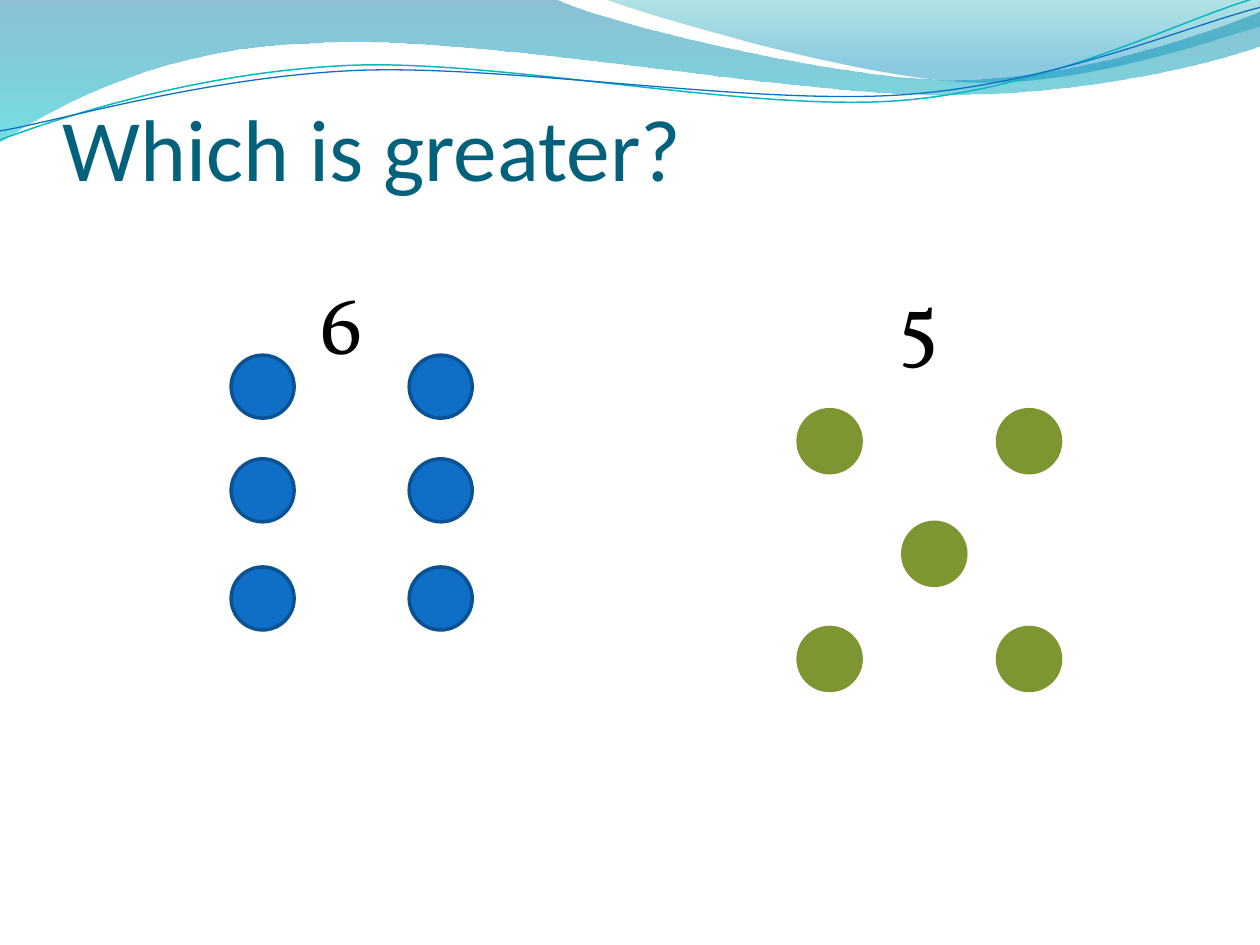
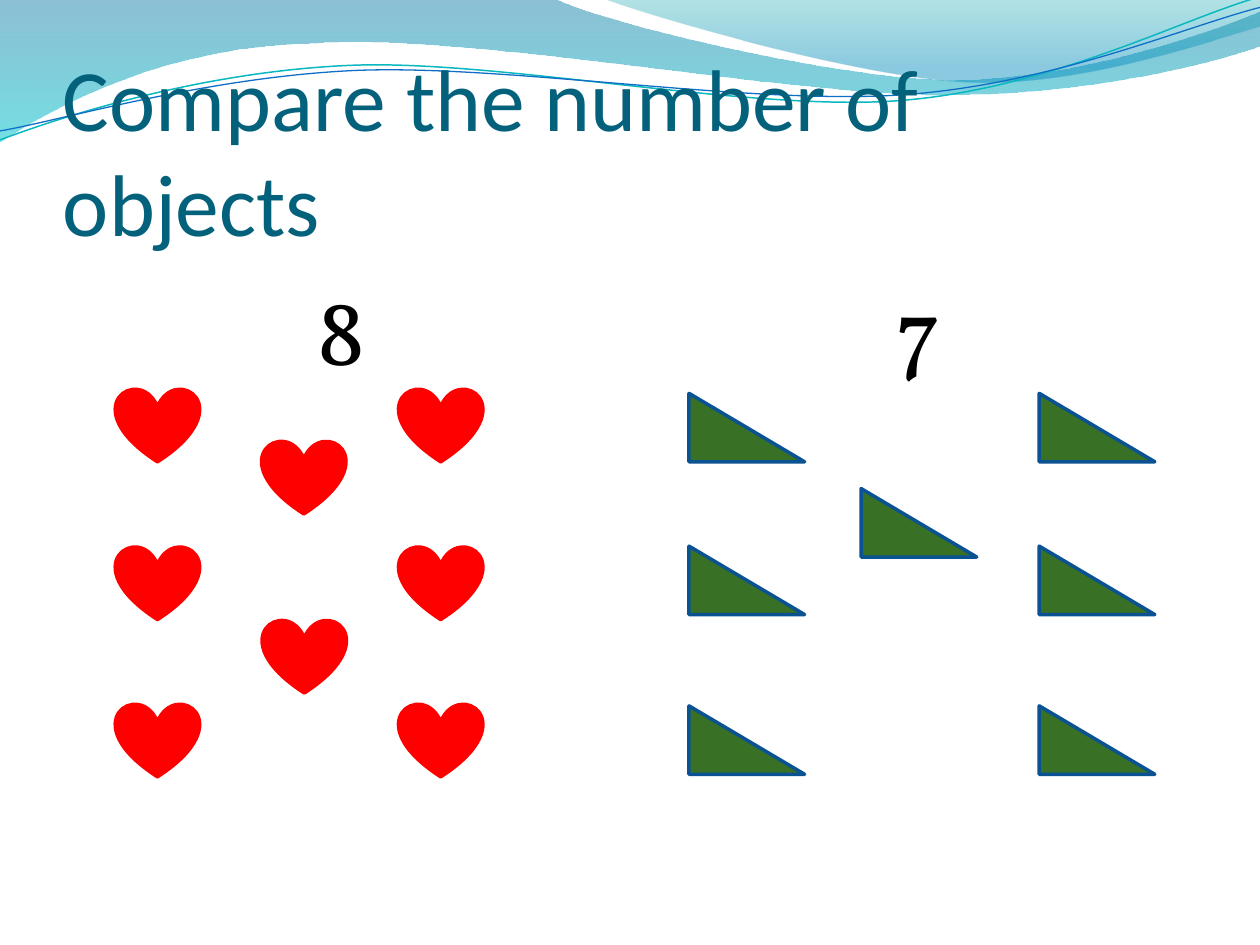
"""Build two slides that compare counts of objects."""
from dataclasses import dataclass
from itertools import product
from math import cos, radians, sin

from lxml.etree import SubElement
from pptx import Presentation
from pptx.dml.color import RGBColor
from pptx.enum.shapes import MSO_SHAPE
from pptx.enum.text import MSO_ANCHOR, PP_ALIGN
from pptx.oxml.ns import qn
from pptx.util import Cm, Pt


@dataclass(frozen=True)
class Theme:
    title: str = "04617B"
    ink: str = "000000"
    blue: str = "0F6FC6"
    edge: str = "0B5292"
    teal: str = "0AB8BF"
    olive: str = "7E9632"
    red: str = "FF0000"
    green: str = "387026"
    band: tuple = ((0, "0074A1", 45), (1, "00C6CF", 55))
    fan: tuple = ((0, "00A1A9", 30), (0.8, "008BBF", 45))
    head: str = "Calibri"
    body: str = "Vollkorn"
    big: int = 50
    count: int = 48
    large: int = 54


TILT = 2.7
BAND = [(0, 0), (11.18, -0.03), (12.09, 0.43, 16.87, 1.6, 19.25, 1.6),
        (21.67, 1.6, 24.33, 0.66, 25.4, 0.23), (25.43, 0.91),
        (24.97, 1.12, 22.1, 1.93, 18.95, 1.91),
        (15.8, 1.91, 9.7, 0.71, 6.53, 0.86),
        (3.28, 0.91, 1.17, 2.11, -0.03, 2.87)]
FAN = [(12.17, -0.03), (12.93, 0.28, 17.32, 1.57, 19.53, 1.65),
       (21.74, 1.75, 24.41, 0.81, 25.4, 0.53), (25.4, 0)]
UPPER = [(0, 2.82), (1.22, 2.36, 4.01, 1.45, 7.04, 1.32),
         (10.03, 1.19, 15.06, 2.26, 18.11, 2.03),
         (21.16, 1.8, 23.83, 0.38, 25.35, -0.05)]
LOWER = [(0, 2.64), (1.19, 2.44, 4.17, 1.55, 7.19, 1.42),
         (10.24, 1.3, 15.16, 2.13, 18.21, 1.91),
         (21.23, 1.7, 23.9, 0.53, 25.4, 0.15)]


def pairs(part):
    return list(zip(part[::2], part[1::2]))


def turn(path, angle, mid=(12.7, 1.5)):
    c, s = cos(radians(angle)), sin(radians(angle))
    turned = []
    for part in path:
        moved = [(x - mid[0], y - mid[1]) for x, y in pairs(part)]
        turned.append([v for x, y in moved
                       for v in (mid[0] + x * c - y * s, mid[1] + x * s + y * c)])
    return turned


def write(frame, text, font, size, color, align=PP_ALIGN.LEFT, before=0):
    para = frame.paragraphs[0]
    para.alignment = align
    para.space_before = Pt(before)
    run = para.add_run()
    run.text = text
    run.font.name = font
    run.font.size = Pt(size)
    run.font.color.rgb = RGBColor.from_string(color)


class Deck:
    def __init__(self, theme):
        self.theme = theme
        self.show = Presentation()
        self.show.slide_width, self.show.slide_height = Cm(25.4), Cm(19.05)
        self.slide = None

    def page(self, title, top):
        self.slide = self.show.slides.add_slide(self.show.slide_layouts[6])
        look = self.theme
        self.wash(BAND, look.band)
        self.wash(FAN, look.fan)
        self.wave(UPPER, look.teal, 0.85)
        self.wave(LOWER, look.blue, 0.75)
        frame = self.box(1.27, top, 22.86, 3.18)
        frame.margin_left = frame.margin_right = frame.margin_bottom = 0
        frame.vertical_anchor = MSO_ANCHOR.BOTTOM
        write(frame, title, look.head, look.big, look.title)

    def box(self, left, top, width, height):
        frame = self.slide.shapes.add_textbox(
            Cm(left), Cm(top), Cm(width), Cm(height)).text_frame
        frame.word_wrap = True
        return frame

    def outline(self, path, close):
        knots = [(Cm(part[-2]), Cm(part[-1])) for part in path]
        pen = self.slide.shapes.build_freeform(*knots[0])
        pen.add_line_segments(knots[1:], close=close)
        shape = pen.convert_to_shape()
        shape.shadow.inherit = False
        lines = list(shape.element.spPr.iter(qn("a:lnTo")))
        for line, part in zip(lines, path[1:]):
            if len(part) == 6:
                self.bend(shape, line, part)
        return shape

    def bend(self, shape, line, part):
        curve = SubElement(line.getparent(), qn("a:cubicBezTo"))
        for x, y in pairs(part):
            SubElement(curve, qn("a:pt"), x=str(Cm(x) - shape.left),
                       y=str(Cm(y) - shape.top))
        line.getparent().replace(line, curve)

    def wash(self, path, stops):
        shape = self.outline(path, True)
        shape.line.fill.background()
        shape.fill.gradient()
        shape.fill.gradient_angle = 270
        for stop, (place, color, alpha) in zip(shape.fill.gradient_stops, stops):
            stop.position = place
            stop.color.rgb = RGBColor.from_string(color)
        tints = shape.element.spPr.iter(qn("a:srgbClr"))
        for tint, (place, color, alpha) in zip(tints, stops):
            SubElement(tint, qn("a:alpha"), val=str(alpha * 1000))

    def wave(self, path, color, width):
        shape = self.outline(turn(path, TILT), False)
        shape.rotation = 360 - TILT
        shape.fill.background()
        self.stroke(shape, color, width)

    def stroke(self, shape, color, width):
        shape.line.color.rgb = RGBColor.from_string(color)
        shape.line.width = Pt(width)

    def counts(self, pair, size):
        for text, left in zip(pair, (1.27, 12.9)):
            write(self.box(left, 5.33, 11.23, 12.32), text, self.theme.body, size,
                  self.theme.ink, align=PP_ALIGN.CENTER, before=size * 0.2)

    def marks(self, kind, spots, size, fill, line):
        for left, top in spots:
            shape = self.slide.shapes.add_shape(
                kind, Cm(left), Cm(top), Cm(size[0]), Cm(size[1]))
            shape.shadow.inherit = False
            shape.fill.solid()
            shape.fill.fore_color.rgb = RGBColor.from_string(fill)
            self.stroke(shape, line, 2)


def main():
    look = Theme()
    deck = Deck(look)

    deck.page("Which is greater?", 0.84)
    deck.counts("65", look.count)
    dot = (1.27, 1.27)
    deck.marks(MSO_SHAPE.OVAL, product((4.66, 8.25), (7.16, 9.25, 11.43)),
               dot, look.blue, look.edge)
    deck.marks(MSO_SHAPE.OVAL, [*product((16.09, 20.11), (8.26, 12.65)), (18.2, 10.53)],
               dot, look.olive, look.olive)

    deck.page("Compare the number of objects", 1.95)
    deck.counts("87", look.large)
    deck.marks(MSO_SHAPE.HEART,
               [*product((2.33, 8.04), (7.83, 11.01, 14.18)), (5.28, 8.88), (5.29, 12.49)],
               (1.69, 1.48), look.red, look.red)
    deck.marks(MSO_SHAPE.RIGHT_TRIANGLE,
               [*product((13.89, 20.95), (7.93, 11.01, 14.23)), (17.36, 9.85)],
               (2.33, 1.38), look.green, look.edge)

    deck.show.save("out.pptx")


if __name__ == "__main__":
    main()
